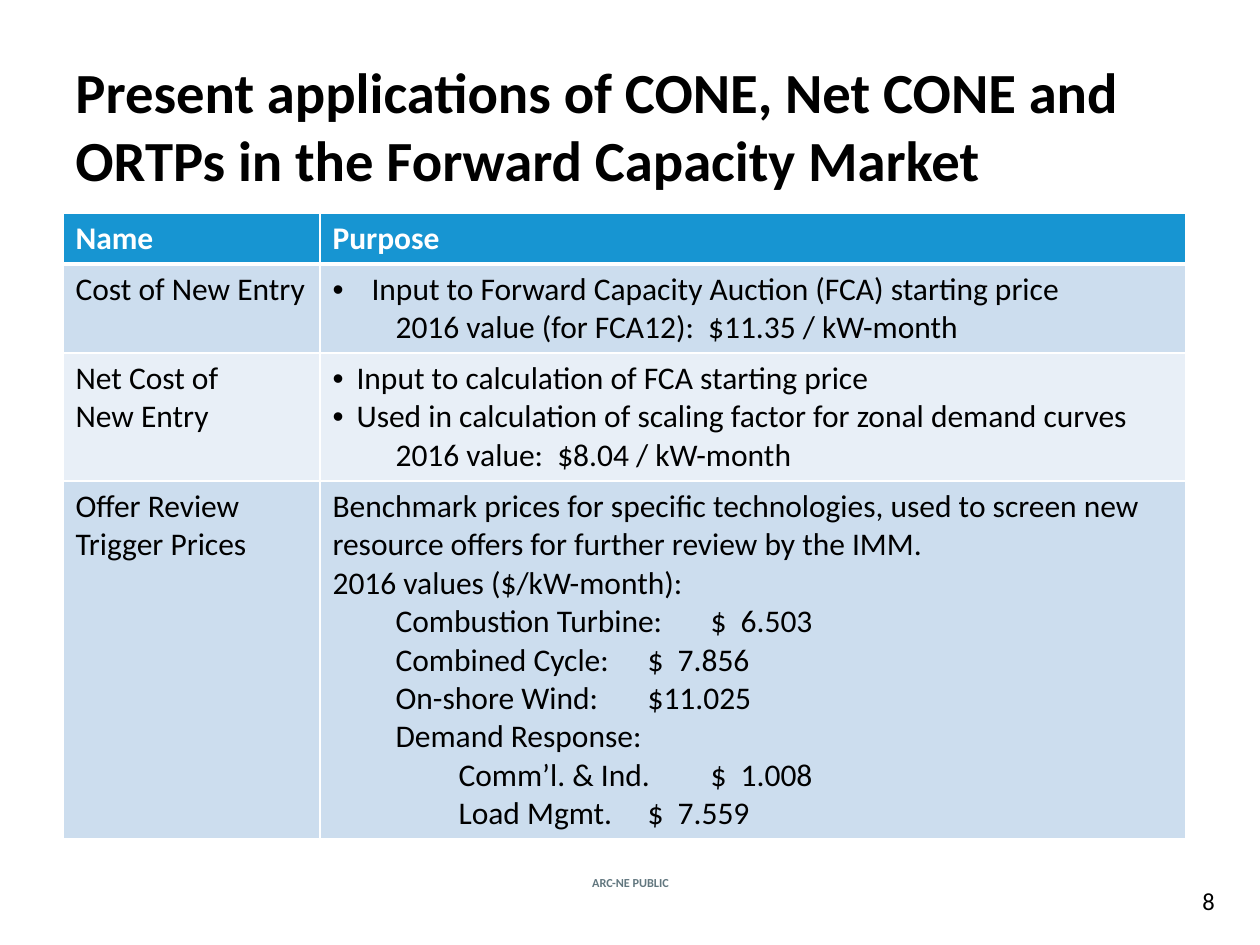
from dataclasses import dataclass

from lxml.etree import SubElement
from pptx import Presentation
from pptx.dml.color import RGBColor
from pptx.enum.text import MSO_ANCHOR, PP_ALIGN
from pptx.oxml.ns import qn
from pptx.slide import Slide
from pptx.util import Pt

PX = 914400 // 126
BLACK = RGBColor(0x00, 0x00, 0x00)
WHITE = RGBColor(0xFF, 0xFF, 0xFF)
SLATE = RGBColor(0x62, 0x77, 0x7F)
HEADER_BLUE = RGBColor(0x17, 0x95, 0xD2)
BAND_DARK = RGBColor(0xCC, 0xDD, 0xEE)
BAND_LIGHT = RGBColor(0xE8, 0xEF, 0xF7)

COLUMN_WIDTHS = [257, 866]
ROW_HEIGHTS = [51, 89, 128, 358]


@dataclass
class Line:
    text: str
    indent: int = 0
    bullet: bool = False


def detail(text):
    return Line(text, indent=63)


ROWS = [
    ([Line("Name")], [Line("Purpose")]),
    ([Line("Cost of New Entry")], [
        Line("Input to Forward Capacity Auction (FCA) starting price", 39, True),
        detail("2016 value (for FCA12):  $11.35 / kW-month"),
    ]),
    ([Line("Net Cost of\nNew Entry")], [
        Line("Input to calculation of FCA starting price", 24, True),
        Line("Used in calculation of scaling factor for zonal demand curves", 24, True),
        detail("2016 value:  $8.04 / kW-month"),
    ]),
    ([Line("Offer Review Trigger Prices")], [
        Line("Benchmark prices for specific technologies, used to screen new "
             "resource offers for further review by the IMM.\n"
             "2016 values ($/kW-month):"),
        detail("Combustion Turbine: \t$  6.503"),
        detail("Combined Cycle: \t$  7.856"),
        detail("On-shore Wind: \t$11.025"),
        detail("Demand Response:"),
        detail("\tComm’l. & Ind.\t$  1.008"),
        detail("\tLoad Mgmt.\t$  7.559"),
    ]),
]


@dataclass
class SlideBuilder:
    slide: Slide
    font: str = "Calibri"
    table_size: float = 18

    def add_runs(self, paragraph, text, size, color, bold=False):
        """Add text as runs, with a line break at each newline."""
        for number, part in enumerate(text.split("\n")):
            if number:
                paragraph.add_line_break()
            run = paragraph.add_run()
            run.text = part
            run.font.name = self.font
            run.font.size = Pt(size)
            run.font.bold = bold
            run.font.color.rgb = color

    def text_box(self, box, text, size, color, bold=False,
                 align=PP_ALIGN.LEFT, inset=None):
        shape = self.slide.shapes.add_textbox(*(value * PX for value in box))
        frame = shape.text_frame
        frame.word_wrap = True
        frame.vertical_anchor = MSO_ANCHOR.MIDDLE
        if inset is not None:
            frame.margin_left = frame.margin_right = inset * PX
            frame.margin_top = frame.margin_bottom = inset * PX
        paragraph = frame.paragraphs[0]
        paragraph.alignment = align
        self.add_runs(paragraph, text, size, color, bold)

    def indent(self, paragraph, line):
        properties = paragraph._p.get_or_add_pPr()
        properties.set("marL", str(line.indent * PX))
        properties.set("indent", str(-line.indent * PX if line.bullet else 0))
        if line.bullet:
            SubElement(properties, qn("a:buFont"), typeface="Arial")
            SubElement(properties, qn("a:buChar"), char="•")
        else:
            SubElement(properties, qn("a:buNone"))

    def borders(self, cell, top, bottom):
        """Draw white cell borders, with the top and bottom widths in points."""
        properties = cell._tc.get_or_add_tcPr()
        widths = {"a:lnL": 1, "a:lnR": 1, "a:lnT": top, "a:lnB": bottom}
        for position, (tag, width) in enumerate(widths.items()):
            border = SubElement(properties, qn(tag), w=str(Pt(width)))
            fill = SubElement(border, qn("a:solidFill"))
            SubElement(fill, qn("a:srgbClr"), val=str(WHITE))
            properties.insert(position, border)

    def cell(self, cell, lines, row):
        header = row == 0
        cell.fill.solid()
        cell.fill.fore_color.rgb = (
            HEADER_BLUE if header else BAND_DARK if row % 2 else BAND_LIGHT)
        self.borders(cell, top=3 if row == 1 else 1, bottom=3 if header else 1)
        frame = cell.text_frame
        for number, line in enumerate(lines):
            paragraph = frame.add_paragraph() if number else frame.paragraphs[0]
            self.indent(paragraph, line)
            self.add_runs(paragraph, line.text, self.table_size,
                          WHITE if header else BLACK, header)

    def table(self, left, top, widths, heights, rows):
        frame = self.slide.shapes.add_table(
            len(heights), len(widths), left * PX, top * PX,
            sum(widths) * PX, sum(heights) * PX)
        table = frame.table
        for column, width in zip(table.columns, widths):
            column.width = width * PX
        for row, height in zip(table.rows, heights):
            row.height = height * PX
        for row, cells in enumerate(rows):
            for column, lines in enumerate(cells):
                self.cell(table.cell(row, column), lines, row)


def main():
    presentation = Presentation()
    presentation.slide_width = 1260 * PX
    presentation.slide_height = 945 * PX
    builder = SlideBuilder(presentation.slides.add_slide(presentation.slide_layouts[6]))
    builder.text_box((538, 872, 185, 21), "ARC-NE PUBLIC", 7, SLATE,
                     bold=True, align=PP_ALIGN.CENTER)
    builder.text_box((1187, 882, 43, 37), "8", 14, BLACK,
                     align=PP_ALIGN.CENTER, inset=0)
    builder.text_box(
        (63, 38, 1134, 173),
        "Present applications of CONE, Net CONE and ORTPs in the Forward Capacity Market",
        32.4, BLACK, bold=True)
    builder.table(63, 213, COLUMN_WIDTHS, ROW_HEIGHTS, ROWS)
    presentation.save("out.pptx")


if __name__ == "__main__":
    main()
